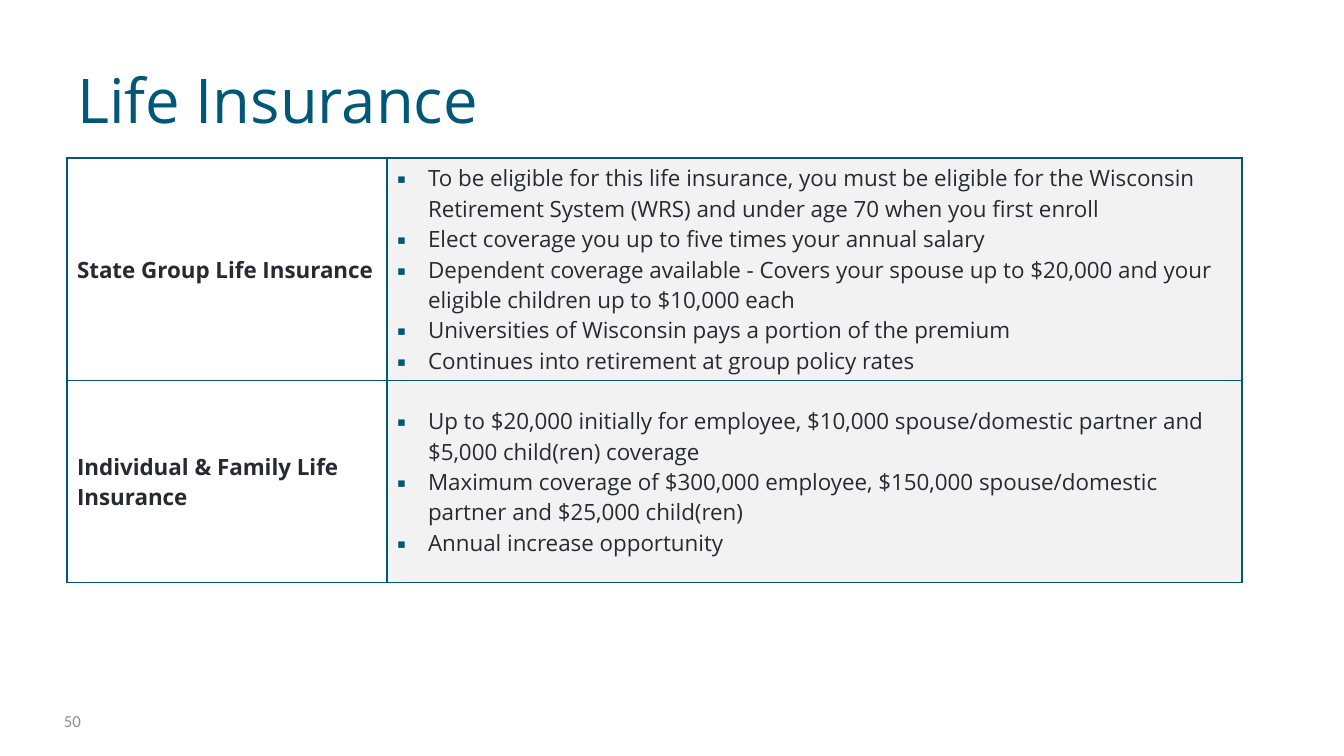
from pptx import Presentation
from pptx.dml.color import RGBColor
from pptx.enum.text import MSO_ANCHOR as Anchor
from pptx.oxml.ns import qn
from pptx.util import Pt
from lxml.etree import SubElement as Sub, Element

SCALE = 914400 / 100.8
TEAL, INK, PALE, GRAY = "005777", "292934", "F2F2F2", "8E8E90"
SANS = "Open Sans"

PLANS = [
    ("State Group Life Insurance", [
        "To be eligible for this life insurance, you must be eligible for the "
        "Wisconsin Retirement System (WRS) and under age 70 when you first enroll",
        "Elect coverage you up to five times your annual salary",
        "Dependent coverage available - Covers your spouse up to $20,000 and "
        "your eligible children up to $10,000 each",
        "Universities of Wisconsin pays a portion of the premium",
        "Continues into retirement at group policy rates",
    ]),
    ("Individual & Family Life Insurance", [
        "Up to $20,000 initially for employee, $10,000 spouse/domestic partner "
        "and $5,000 child(ren) coverage",
        "Maximum coverage of $300,000 employee, $150,000 spouse/domestic "
        "partner and $25,000 child(ren)",
        "Annual increase opportunity",
    ]),
]
WIDTHS, HEIGHTS = (320, 855), (220, 202)


def px(n):
    return round(n * SCALE)


def tint(code):
    return RGBColor.from_string(code)


def add_run(para, text, size, color, face=SANS, bold=False):
    run = para.add_run()
    run.text = text
    font = run.font
    font.size, font.name, font.bold = Pt(size), face, bold
    font.color.rgb = tint(color)


def add_bullet(para):
    props = para._p.get_or_add_pPr()
    props.set("marL", str(px(31)))
    props.set("indent", str(px(-31)))
    Sub(Sub(props, qn("a:buClr")), qn("a:srgbClr"), val=TEAL)
    Sub(props, qn("a:buFont"), typeface=SANS)
    Sub(props, qn("a:buChar"), char="▪")


def add_edges(cell):
    props = cell._tc.get_or_add_tcPr()
    # Edge lines come before the fill
    for spot, side in enumerate(("lnL", "lnR", "lnT", "lnB")):
        line = Element(qn("a:" + side), w=str(Pt(1)))
        Sub(Sub(line, qn("a:solidFill")), qn("a:srgbClr"), val=TEAL)
        props.insert(spot, line)


def fill_cell(cell, lines, fill=None):
    cell.vertical_anchor = Anchor.MIDDLE
    if fill:
        cell.fill.solid()
        cell.fill.fore_color.rgb = tint(fill)
    else:
        cell.fill.background()
    add_edges(cell)
    frame = cell.text_frame
    for i, text in enumerate(lines):
        para = frame.add_paragraph() if i else frame.paragraphs[0]
        if fill:
            add_bullet(para)
        add_run(para, text, 16, INK, bold=not fill)


def set_title(slide, text):
    title = slide.shapes.title
    title.left, title.top = px(67), px(10)
    title.width, title.height = px(1204), px(126)
    frame = title.text_frame
    frame.word_wrap = True
    frame.vertical_anchor = Anchor.BOTTOM
    frame.margin_bottom = 0
    para = frame.paragraphs[0]
    para.alignment = 1
    add_run(para, text, 44, TEAL)


def add_table(slide):
    table = slide.shapes.add_table(
        len(PLANS), len(WIDTHS), px(67), px(158),
        px(sum(WIDTHS)), px(sum(HEIGHTS))).table
    table.first_row = table.horz_banding = False
    for col, width in zip(table.columns, WIDTHS):
        col.width = px(width)
    for row, height, (name, facts) in zip(table.rows, HEIGHTS, PLANS):
        row.height = px(height)
        fill_cell(row.cells[0], [name])
        fill_cell(row.cells[1], facts, PALE)


def add_label(slide, text, left, top, width, height):
    box = slide.shapes.add_textbox(px(left), px(top), px(width), px(height))
    frame = box.text_frame
    frame.word_wrap = True
    frame.vertical_anchor = Anchor.MIDDLE
    add_run(frame.paragraphs[0], text, 12, GRAY, "Calibri")


def main():
    deck = Presentation()
    deck.slide_width, deck.slide_height = px(1344), px(756)
    slide = deck.slides.add_slide(deck.slide_layouts[5])
    # Heading, plans and page number
    set_title(slide, "Life Insurance")
    add_table(slide)
    add_label(slide, "50", 54, 701, 56, 40)
    deck.save("out.pptx")


if __name__ == "__main__":
    main()
